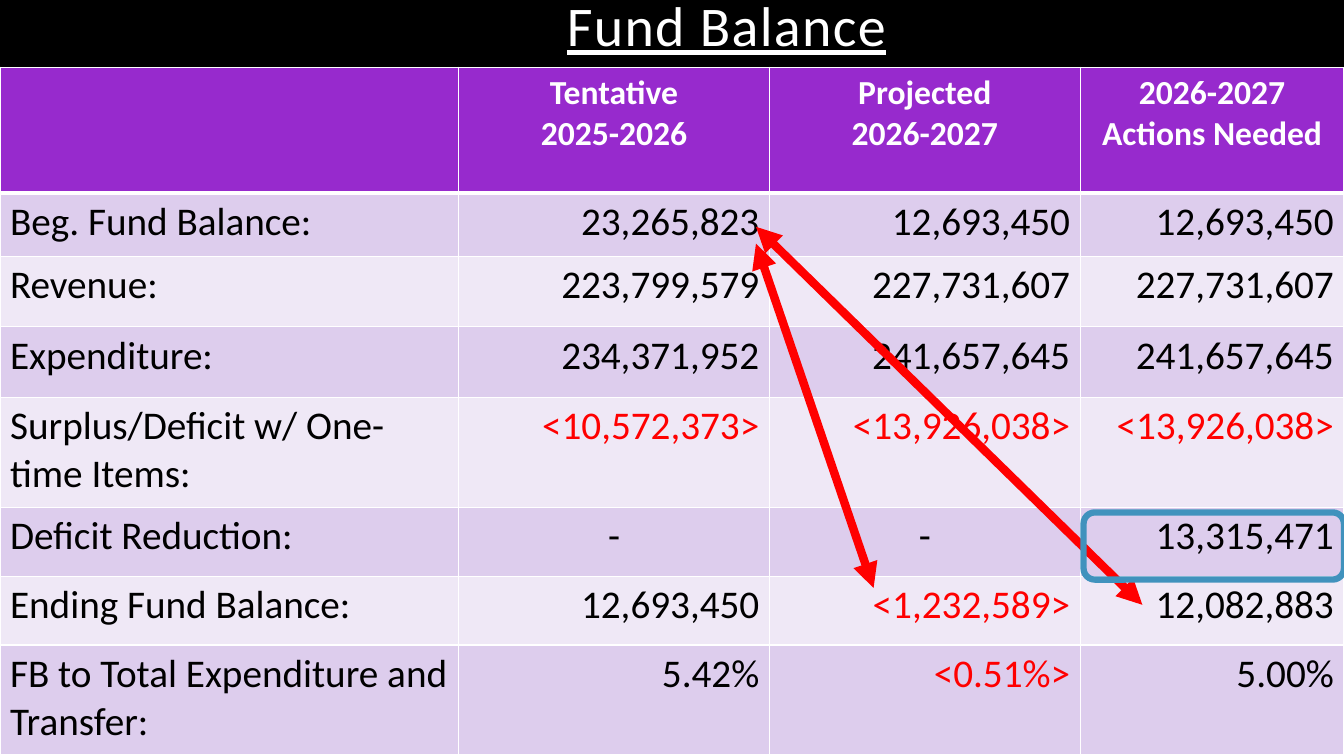
from lxml import etree
from pptx import Presentation
from pptx.dml.color import RGBColor
from pptx.enum.shapes import MSO_CONNECTOR, MSO_SHAPE
from pptx.enum.text import MSO_ANCHOR, PP_ALIGN
from pptx.oxml.ns import qn
from pptx.util import Inches, Pt

LEFT, CENTER, RIGHT = PP_ALIGN.LEFT, PP_ALIGN.CENTER, PP_ALIGN.RIGHT
BOTTOM = MSO_ANCHOR.BOTTOM
STRAIGHT = MSO_CONNECTOR.STRAIGHT
ROUNDED = MSO_SHAPE.ROUNDED_RECTANGLE

# The slide is a grid of 160 columns by 90 rows, each a twelfth of an inch
GRID_COLUMNS, GRID_ROWS = 160, 90

BLACK, WHITE, RED = "000000", "FFFFFF", "FF0000"
PURPLE, LILAC, PALE_LILAC, BLUE = "972ACD", "DDCDED", "EFE8F6", "4092BD"

COLUMN_WIDTHS = [54.6, 37, 37, 31.4]
ROW_HEIGHTS = [15, 7.5, 8.4, 8.4, 13.1, 8.2, 8.2, 13.1]
FUND_ROWS = [
    ["", "Tentative\n2025-2026", "Projected\n2026-2027", "2026-2027\nActions Needed"],
    ["Beg. Fund Balance:", "23,265,823", "12,693,450", "12,693,450"],
    ["Revenue:", "223,799,579", "227,731,607", "227,731,607"],
    ["Expenditure:", "234,371,952", "241,657,645", "241,657,645"],
    ["Surplus/Deficit w/ One-time Items:", "<10,572,373>", "<13,926,038>", "<13,926,038>"],
    ["Deficit Reduction:", "-", "-", "13,315,471"],
    ["Ending Fund Balance:", "12,693,450", "<1,232,589>", "12,082,883"],
    ["FB to Total Expenditure and Transfer:", "5.42%", "<0.51%>", "5.00%"],
]


def rgb(hex_color):
    return RGBColor.from_string(hex_color)


def grid(*units):
    return [Inches(unit / 12) for unit in units]


class FundSlide:
    font_name = "Calibri"

    def __init__(self, presentation, background):
        self.slide = presentation.slides.add_slide(presentation.slide_layouts[6])
        fill = self.slide.background.fill
        fill.solid()
        fill.fore_color.rgb = rgb(background)

    def set_text(self, frame, text, size, color, align, bold=False):
        frame.text = text
        for paragraph in frame.paragraphs:
            paragraph.alignment = align
            for run in paragraph.runs:
                run.font.name = self.font_name
                run.font.size = Pt(size)
                run.font.bold = bold
                run.font.color.rgb = rgb(color)

    def title(self, text, *box):
        frame = self.slide.shapes.add_textbox(*grid(*box)).text_frame
        frame.word_wrap = True
        frame.vertical_anchor = BOTTOM
        self.set_text(frame, text, 40, WHITE, CENTER)
        heading = frame.paragraphs[0]
        heading.line_spacing = 0.9
        heading.runs[0].font.underline = True
        heading.runs[0].font._element.set("spc", "100")

    def borders(self, cell, top, bottom):
        properties = cell._tc.get_or_add_tcPr()
        for side, points in (("L", 1), ("R", 1), ("T", top), ("B", bottom)):
            edge = etree.SubElement(properties, qn(f"a:ln{side}"), w=str(Pt(points)))
            fill = etree.SubElement(edge, qn("a:solidFill"))
            etree.SubElement(fill, qn("a:srgbClr"), val=WHITE)

    def cell(self, cell, text, row, column):
        # The header rule is shared by the first two rows
        self.borders(cell, 3 if row == 1 else 1, 3 if row == 0 else 1)
        cell.fill.solid()
        if row == 0:
            cell.fill.fore_color.rgb = rgb(PURPLE)
            self.set_text(cell.text_frame, text, 24, WHITE, CENTER, bold=True)
            return
        cell.fill.fore_color.rgb = rgb(LILAC if row % 2 else PALE_LILAC)
        color = RED if text.startswith("<") else BLACK
        align = LEFT if column == 0 else CENTER if text == "-" else RIGHT
        self.set_text(cell.text_frame, text, 28, color, align)

    def table(self, rows, widths, heights, left, top):
        box = grid(left, top, sum(widths), sum(heights))
        table = self.slide.shapes.add_table(len(rows), len(widths), *box).table
        for column, width in zip(table.columns, grid(*widths)):
            column.width = width
        for table_row, height in zip(table.rows, grid(*heights)):
            table_row.height = height
        for row, texts in enumerate(rows):
            for column, text in enumerate(texts):
                self.cell(table.cell(row, column), text, row, column)

    def double_arrow(self, *ends):
        arrow = self.slide.shapes.add_connector(STRAIGHT, *grid(*ends))
        arrow.line.color.rgb = rgb(RED)
        arrow.line.width = Pt(6)
        line = arrow.line._get_or_add_ln()
        for end in ("headEnd", "tailEnd"):
            etree.SubElement(line, qn(f"a:{end}"), type="triangle")
        etree.SubElement(arrow._element.spPr, qn("a:effectLst"))

    def highlight(self, *box):
        frame = self.slide.shapes.add_shape(ROUNDED, *grid(*box))
        frame.shadow.inherit = False
        frame.fill.background()
        frame.line.color.rgb = rgb(BLUE)
        frame.line.width = Pt(4.5)


def main():
    presentation = Presentation()
    presentation.slide_width, presentation.slide_height = grid(GRID_COLUMNS, GRID_ROWS)
    fund = FundSlide(presentation, BLACK)

    # Fund balance table and heading
    fund.table(FUND_ROWS, COLUMN_WIDTHS, ROW_HEIGHTS, 0, 8)
    fund.title("Fund Balance", 15, 0.6, 143, 7)

    # Beginning balance against the two projected ending balances
    fund.double_arrow(90, 29, 104, 70)
    fund.double_arrow(90, 27, 136, 72)

    # Deficit reduction needed
    fund.highlight(129, 61, 31, 8)

    presentation.save("out.pptx")


if __name__ == "__main__":
    main()
